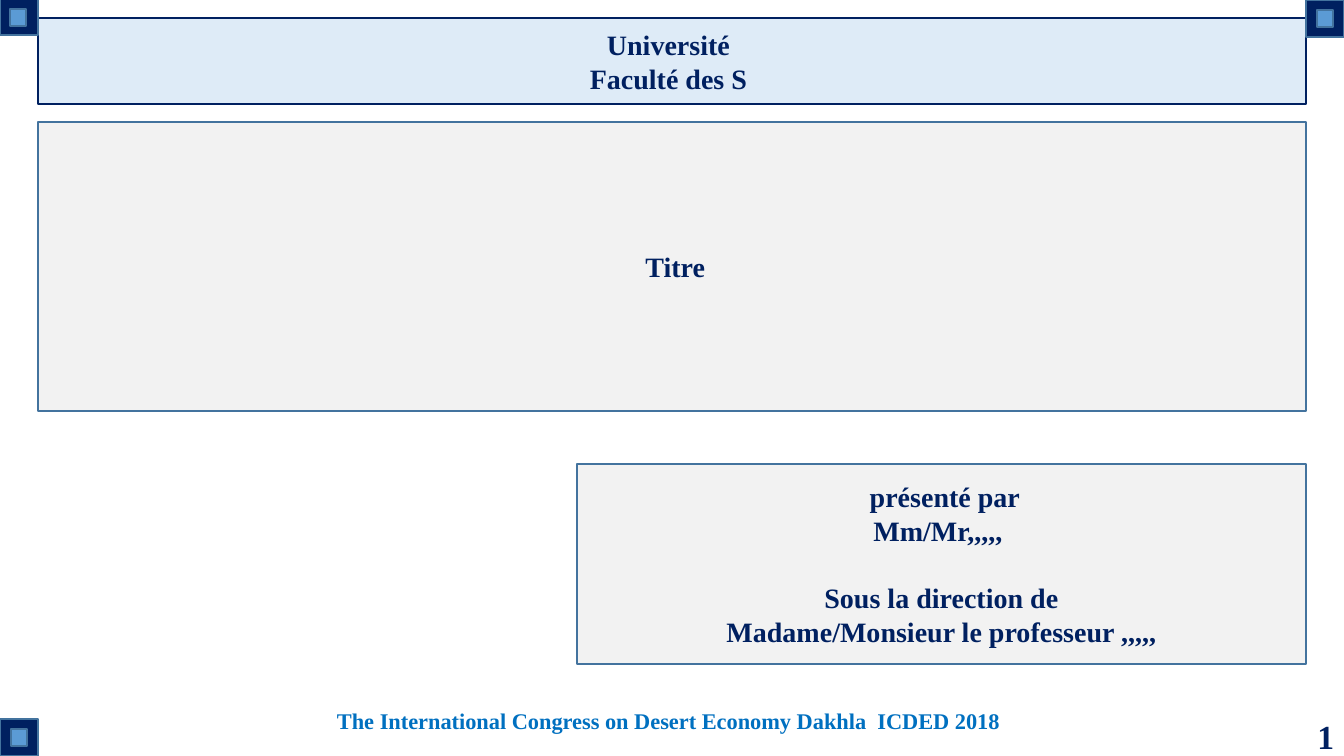
from pptx import Presentation
from pptx import util as u
from pptx.dml import color
from pptx.enum import shapes, text

EMU_PER_PX = 12192000 / 1344
NAVY, STEEL, SKY = "002060", "43739E", "5B9BD5"
PALE_BLUE, PALE_GREY, BLUE = "DEEBF7", "F2F2F2", "0070C0"


def px(length):
    return u.Emu(round(length * EMU_PER_PX))


def rgb(value):
    return color.RGBColor.from_string(value)


class CoverPage:
    font = "Times New Roman"

    def __init__(self, deck):
        self.page = deck.slides.add_slide(deck.slide_layouts[5])

    def paint(self, box, fill, line):
        box.fill.solid()
        box.fill.fore_color.rgb = rgb(fill)
        box.line.color.rgb = rgb(line)
        box.line.width = u.Pt(1)

    def add_lines(self, box, lines, size=20, ink=NAVY, align=text.PP_ALIGN.CENTER, gap_before=None):
        """Fill a box with bold lines; gap_before is the index of a line set apart."""
        frame = box.text_frame
        frame.word_wrap = True
        frame.auto_size = text.MSO_AUTO_SIZE.NONE
        frame.vertical_anchor = text.MSO_ANCHOR.MIDDLE
        for index, line in enumerate(lines):
            para = frame.add_paragraph() if index else frame.paragraphs[0]
            para.alignment = align
            para.line_spacing = 1.0
            para.space_before = u.Pt(24 if index == gap_before else 0)
            span = para.add_run()
            span.text = line
            span.font.name = self.font
            span.font.size = u.Pt(size)
            span.font.bold = True
            span.font.color.rgb = rgb(ink)

    def title(self, area, line, fill, edge):
        box = self.page.shapes.title
        box.left, box.top, box.width, box.height = map(px, area)
        self.paint(box, fill, edge)
        self.add_lines(box, [line])

    def panel(self, area, fill, edge, lines=(), **style):
        box = self.page.shapes.add_shape(shapes.MSO_SHAPE.RECTANGLE, *map(px, area))
        box.shadow.inherit = False
        self.paint(box, fill, edge)
        self.add_lines(box, lines, **style)

    def label(self, area, line, **style):
        self.add_lines(self.page.shapes.add_textbox(*map(px, area)), [line], **style)


def main():
    deck = Presentation()
    deck.slide_width, deck.slide_height = px(1344), px(756)
    cover = CoverPage(deck)

    cover.title((38, 122, 1268, 289), " Titre", PALE_GREY, STEEL)
    cover.panel((38, 18, 1268, 86), PALE_BLUE, NAVY, ["Université ", "Faculté des S "])

    frames = [(0, 719), (1306, 0), (0, -2)]
    cores = [(11, 729), (1317, 10), (10, 9)]
    for frame, core in zip(frames, cores):
        cover.panel((*frame, 38, 37), NAVY, STEEL)
        cover.panel((*core, 16, 17), SKY, STEEL)

    credits = [
        " présenté par",
        "Mm/Mr,,,,, ",
        "Sous la direction de",
        "Madame/Monsieur le professeur ,,,,,",
    ]
    cover.panel((577, 464, 729, 200), PALE_GREY, STEEL, credits, gap_before=2)

    cover.label((1041, 716, 303, 40), "1", size=24, align=text.PP_ALIGN.RIGHT)
    cover.label((321, 701, 695, 40),
                "The International Congress on Desert Economy Dakhla  ICDED 2018",
                size=16, ink=BLUE)
    deck.save("out.pptx")


if __name__ == "__main__":
    main()
